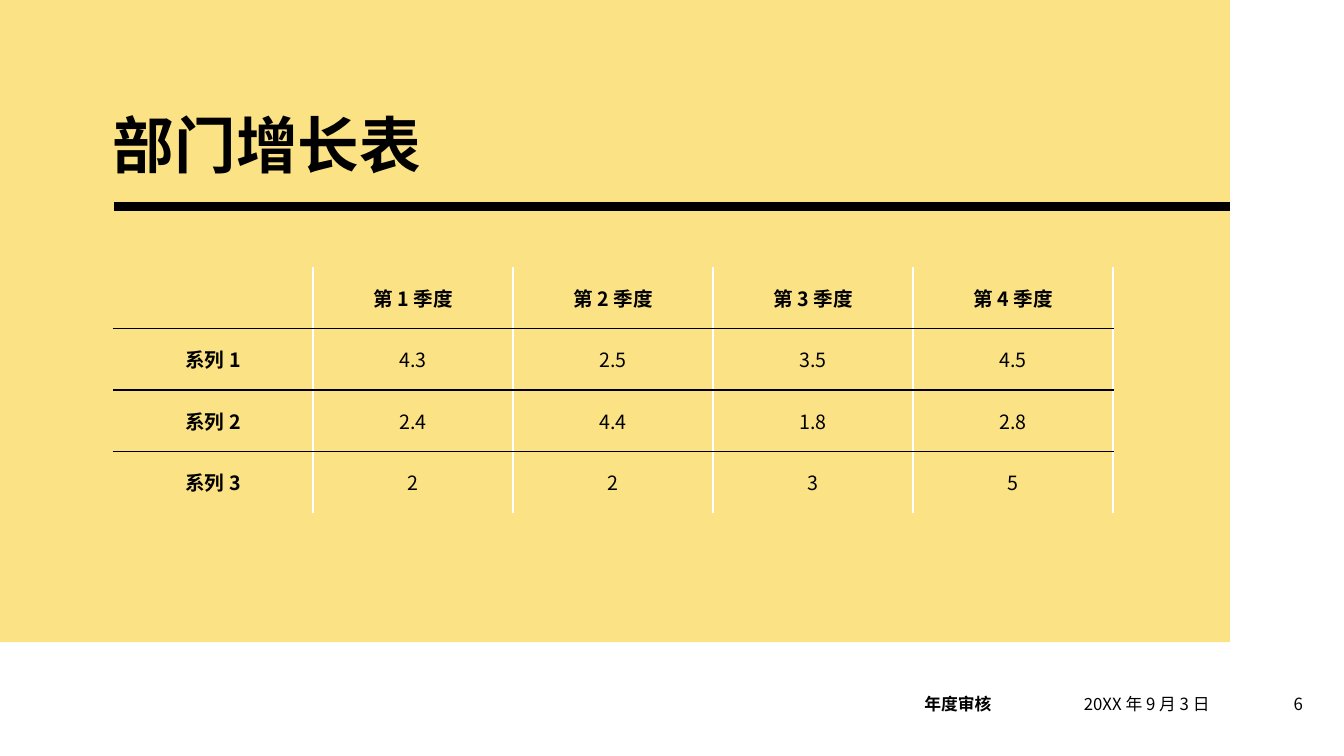
from lxml.etree import SubElement
from pptx import Presentation
from pptx.dml.color import RGBColor
from pptx.enum.shapes import MSO_CONNECTOR, MSO_SHAPE
from pptx.enum.text import MSO_ANCHOR, PP_ALIGN
from pptx.oxml.ns import qn
from pptx.util import Inches, Pt

WHITE = RGBColor(0xFF, 0xFF, 0xFF)
BLACK = RGBColor(0, 0, 0)
YELLOW = RGBColor(0xFB, 0xE2, 0x84)
FONT = "Noto Sans CJK SC"
WIDE, HIGH = 13.33, 7.5
ROWS = [
    ["", "第 1 季度", "第 2 季度", "第 3 季度", "第 4 季度"],
    ["系列 1", "4.3", "2.5", "3.5", "4.5"],
    ["系列 2", "2.4", "4.4", "1.8", "2.8"],
    ["系列 3", "2", "2", "3", "5"],
]


def add_run(para, text, size, bold=False):
    run = para.add_run()
    run.text = text
    font = run.font
    font.size, font.bold, font.name = Pt(size), bold, FONT
    font.color.rgb = BLACK
    SubElement(run._r.get_or_add_rPr(), qn("a:ea"), typeface=FONT)


def add_text(slide, box, text, size, bold=False, align=PP_ALIGN.LEFT,
             anchor=MSO_ANCHOR.MIDDLE, pad=0):
    frame = slide.shapes.add_textbox(*map(Inches, box)).text_frame
    frame.word_wrap = True
    frame.vertical_anchor = anchor
    frame.margin_left = frame.margin_right = Inches(pad)
    frame.margin_top = frame.margin_bottom = 0
    para = frame.paragraphs[0]
    para.alignment = align
    add_run(para, text, size, bold)
    return para


def add_panel(slide, box):
    """Draw the yellow panel with its title and the rule that meets its edge."""
    left, top, width, height = box
    panel = slide.shapes.add_shape(MSO_SHAPE.RECTANGLE, *map(Inches, box))
    panel.shadow.inherit = False
    panel.fill.solid()
    panel.fill.fore_color.rgb = YELLOW
    panel.line.fill.background()

    start, level = left + 1.13, top + 2.05
    rule = slide.shapes.add_connector(
        MSO_CONNECTOR.STRAIGHT, Inches(start), Inches(level),
        Inches(left + width), Inches(level))
    rule.line.color.rgb = BLACK
    rule.line.width = Pt(6)
    SubElement(rule._element.spPr, qn("a:effectLst"))

    title = add_text(slide, (left + 1.12, top + 1.09, 11.04, 0.71),
                     "部门增长表", 44, True, anchor=MSO_ANCHOR.BOTTOM)
    title.line_spacing = 0.9


def set_edge(cell, side, color):
    """Draw one cell border, or clear it when color is None."""
    edge = SubElement(cell._tc.get_or_add_tcPr(), qn("a:ln" + side),
                      w=str(Pt(1)))
    if color is None:
        SubElement(edge, qn("a:noFill"))
    else:
        fill = SubElement(edge, qn("a:solidFill"))
        SubElement(fill, qn("a:srgbClr"), val=str(color))


def add_grid(slide, box):
    """Fill the box with the table: white upright rules, black level ones."""
    table = slide.shapes.add_table(
        len(ROWS), len(ROWS[0]), *map(Inches, box)).table
    table.first_row = table.horz_banding = False
    for col in table.columns:
        col.width = Inches(box[2] / len(ROWS[0]))
    for row in table.rows:
        row.height = Inches(box[3] / len(ROWS))

    last = len(ROWS) - 1
    for r, row in enumerate(ROWS):
        for c, text in enumerate(row):
            cell = table.cell(r, c)
            set_edge(cell, "L", WHITE if c else None)
            set_edge(cell, "R", WHITE)
            set_edge(cell, "T", BLACK if r else None)
            set_edge(cell, "B", BLACK if r < last else None)
            cell.fill.background()
            cell.vertical_anchor = MSO_ANCHOR.MIDDLE
            if text:
                para = cell.text_frame.paragraphs[0]
                para.alignment = PP_ALIGN.CENTER
                add_run(para, text, 14, r == 0 or c == 0)


def add_foot(slide, box):
    left, top, width, height = box
    add_text(slide, (left, top, 1.6, height), "年度审核", 12, True, pad=0.1)
    add_text(slide, (left + 1.68, top, 1.67, height),
             "20XX 年 9 月 3 日", 12, anchor=MSO_ANCHOR.TOP)
    add_text(slide, (left + width - 0.45, top, 0.45, height), "6", 12,
             align=PP_ALIGN.RIGHT, pad=0.1)


def main():
    deck = Presentation()
    deck.slide_width, deck.slide_height = Inches(WIDE), Inches(HIGH)
    slide = deck.slides.add_slide(deck.slide_layouts[6])
    slide.background.fill.solid()
    slide.background.fill.fore_color.rgb = WHITE
    add_panel(slide, (0, 0, 12.2, 6.37))
    add_grid(slide, (1.12, 2.65, 9.92, 2.44))
    add_foot(slide, (9.07, 6.88, 3.95, 0.2))
    deck.save("out.pptx")


if __name__ == "__main__":
    main()
